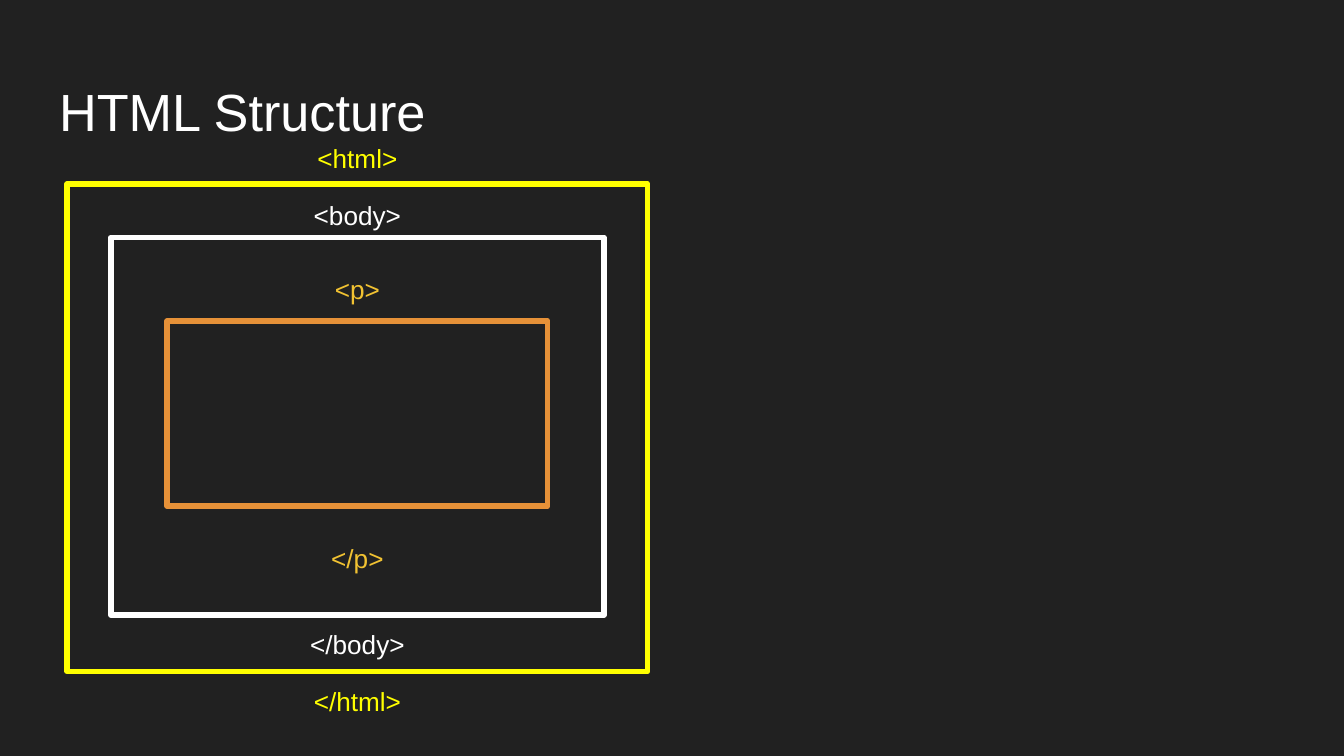
from lxml import etree
from pptx import Presentation
from pptx.dml.color import RGBColor
from pptx.enum import shapes, text
from pptx.oxml import ns
from pptx.util import Pt

DARK = RGBColor(0x21, 0x21, 0x21)
WHITE = RGBColor(0xFF, 0xFF, 0xFF)
YELLOW = RGBColor(0xFF, 0xFF, 0x00)
GOLD = RGBColor(0xF1, 0xC2, 0x32)
ORANGE = RGBColor(0xE6, 0x91, 0x38)


class Diagram:
    """Style and current slide, with one method per kind of element."""

    font = "Arial"
    inset = Pt(7.2)
    border = Pt(3)
    axis = 191.5  # shared centre line of the nested boxes

    def __init__(self, slide):
        self.slide = slide
        slide.background.fill.solid()
        slide.background.fill.fore_color.rgb = DARK

    def label(self, parent, words, left, top, width, height, size, color,
              align=text.PP_ALIGN.LEFT):
        box = parent.add_textbox(Pt(left), Pt(top), Pt(width), Pt(height))
        frame = box.text_frame
        frame.word_wrap = True
        frame.vertical_anchor = text.MSO_ANCHOR.TOP
        frame.margin_left = frame.margin_right = self.inset
        frame.margin_top = frame.margin_bottom = self.inset
        line = frame.paragraphs[0]
        line.text = words
        line.alignment = align
        line.font.name = self.font
        line.font.size = Pt(size)
        line.font.color.rgb = color

    def outline(self, parent, top, width, height, color):
        box = parent.add_shape(shapes.MSO_SHAPE.RECTANGLE,
                               Pt(self.axis - width / 2), Pt(top), Pt(width), Pt(height))
        box.shadow.inherit = False
        box.fill.background()
        box.line.color.rgb = color
        box.line.width = self.border
        etree.SubElement(box.line._get_or_add_ln(), ns.qn("a:round"))

    def element(self, tag, box, tag_size, tag_tops, line_color, tag_color):
        """A box with its opening tag above and its closing tag below."""
        group = self.slide.shapes.add_group_shape().shapes
        self.outline(group, *box, line_color)
        width, height = tag_size
        for words, top in zip((f"<{tag}>", f"</{tag}>"), tag_tops):
            self.label(group, words, self.axis - width / 2, top, width, height,
                       14, tag_color, text.PP_ALIGN.CENTER)


def main():
    deck = Presentation()
    deck.slide_width, deck.slide_height = Pt(720), Pt(405)
    diagram = Diagram(deck.slides.add_slide(deck.slide_layouts[6]))

    # Title
    diagram.label(diagram.slide.shapes, "HTML Structure", 24.6, 35.3, 671, 45.4, 28, WHITE)

    # Nested elements, outermost first: box is top, width, height
    # The opening body tag stands clear of the border below it
    diagram.element("html", (98.5, 311, 261.2), (80.6, 22.3), (69.1, 360), YELLOW, YELLOW)
    diagram.element("body", (127.2, 264.2, 202.4), (69.1, 17.3), (99.5, 329.5), WHITE, WHITE)
    diagram.element("p", (172, 203.8, 99.2), (86.4, 23.8), (139.4, 283.4), ORANGE, GOLD)

    deck.save("out.pptx")


if __name__ == "__main__":
    main()
